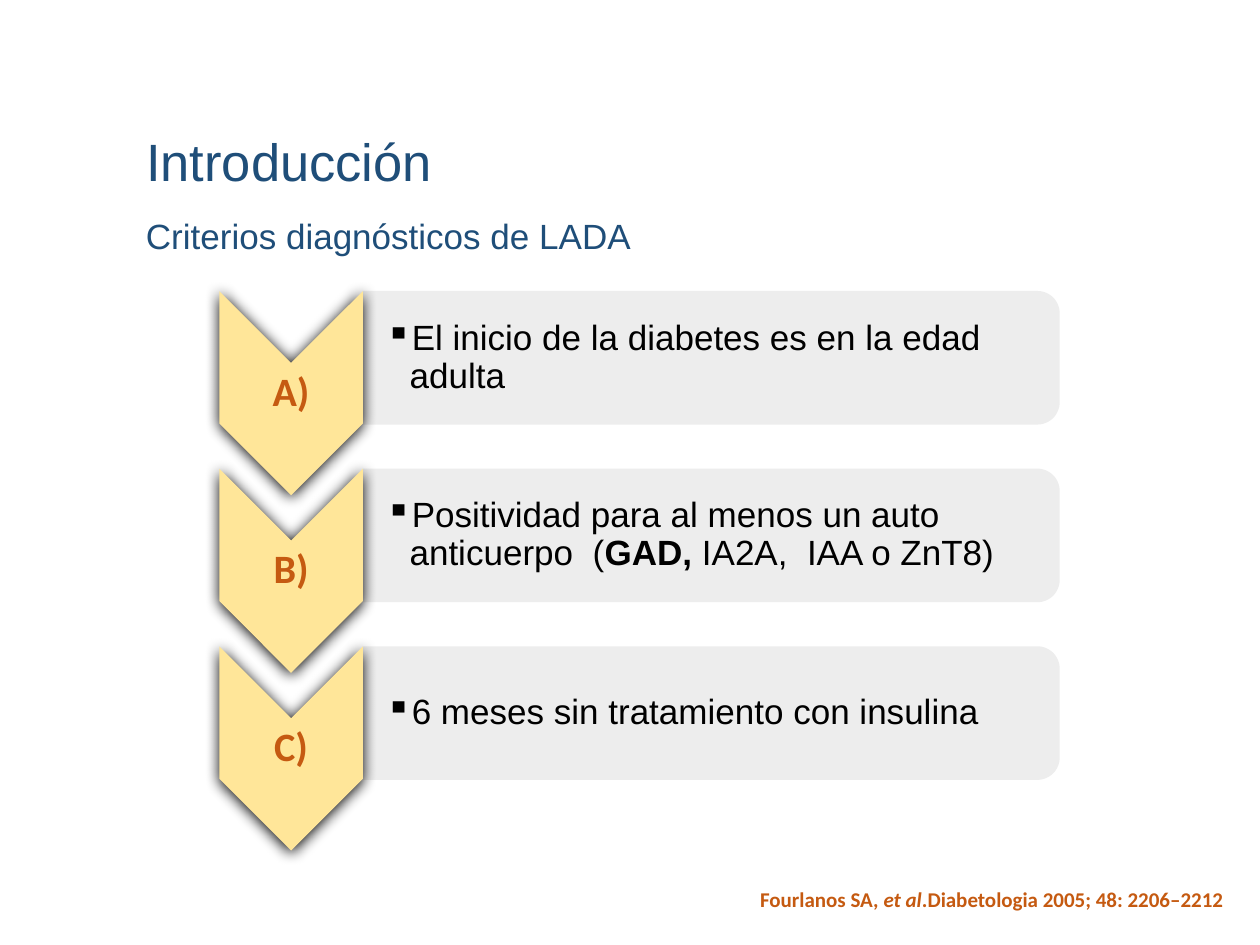
import math
from dataclasses import dataclass

from lxml import etree
from pptx import Presentation
from pptx import util as u
from pptx.dml.color import RGBColor
from pptx.enum import text
from pptx.oxml import parse_xml
from pptx.oxml.ns import qn

NS = "http://schemas.openxmlformats.org/drawingml/2006/main"


@dataclass(frozen=True)
class Theme:
    blue: str = "1F4E79"
    orange: str = "C55A11"
    yellow: str = "FFE699"
    grey: str = "EDEDED"
    black: str = "000000"
    body_font: str = "Arial"
    label_font: str = "Calibri"
    title: float = 30
    body: float = 20
    label: float = 23
    source: float = 12


@dataclass(frozen=True)
class Box:
    x: float
    y: float
    w: float
    h: float

    def emu(self):
        return [u.Inches(v) for v in (self.x, self.y, self.w, self.h)]


T = Theme()
W, H = 10, 7.5
CRITERIA = [
    ("A)", [("El inicio de la diabetes es en la edad adulta", "")]),
    ("B)", [("Positividad para al menos un auto anticuerpo  (", ""),
            ("GAD,", "b"), (" IA2A,  IAA o ZnT8)", "")]),
    ("C)", [("6 meses sin tratamiento con insulina", "")]),
]


def add_runs(p, runs, size, color, font):
    """Each run is a text and its style letters: b for bold, i for italic."""
    for words, style in runs:
        r = p.add_run()
        r.text = words
        r.font.size = u.Pt(size)
        r.font.name = font
        r.font.bold = "b" in style
        r.font.italic = "i" in style
        r.font.color.rgb = RGBColor.from_string(color)


def set_frame(tf, margins, anchor, wrap=True):
    tf.margin_left, tf.margin_top, tf.margin_right, tf.margin_bottom = map(u.Inches, margins)
    tf.vertical_anchor = anchor
    tf.word_wrap = wrap
    tf.auto_size = text.MSO_AUTO_SIZE.NONE


def add_outline(slide, points, fill):
    """Closed outline through points given in inches."""
    pts = [(u.Inches(x), u.Inches(y)) for x, y in points]
    builder = slide.shapes.build_freeform(*pts[0])
    builder.add_line_segments(pts[1:], close=True)
    sp = builder.convert_to_shape()
    sp.shadow.inherit = False
    sp.fill.solid()
    sp.fill.fore_color.rgb = RGBColor.from_string(fill)
    sp.line.fill.background()
    return sp


def add_heading(slide, box, sp, words, size):
    sp.left, sp.top, sp.width, sp.height = box.emu()
    tf = sp.text_frame
    set_frame(tf, (0.1, 0.05, 0.1, 0.05), text.MSO_ANCHOR.TOP, wrap=False)
    p = tf.paragraphs[0]
    p.alignment = text.PP_ALIGN.LEFT
    add_runs(p, [(words, "")], size, T.blue, T.body_font)


def add_bar(slide, box, runs):
    """Grey bar with its two right corners rounded."""
    radius = box.h / 6
    right, bottom = box.x + box.w, box.y + box.h

    def corner(cy, start):
        angles = [math.radians(start + 5 * i) for i in range(19)]
        return [(right - radius + radius * math.cos(a), cy + radius * math.sin(a))
                for a in angles]

    points = [(box.x, box.y), *corner(box.y + radius, -90),
              *corner(bottom - radius, 0), (box.x, bottom)]
    tf = add_outline(slide, points, T.grey).text_frame
    set_frame(tf, (0.18, 0.07, 0.07, 0.07), text.MSO_ANCHOR.MIDDLE)
    p = tf.paragraphs[0]
    p.level = 1
    p.alignment = text.PP_ALIGN.LEFT
    p.line_spacing = 0.9
    pPr = p._p.get_or_add_pPr()
    pPr.set("marL", str(u.Inches(0.19)))
    pPr.set("indent", str(-u.Inches(0.19)))
    etree.SubElement(pPr, qn("a:buChar")).set("char", "▪")
    add_runs(p, runs, T.body, T.black, T.body_font)


def add_chevron(slide, box, label):
    """Downward chevron whose point is half as deep as the box is wide."""
    x, y, right, bottom = box.x, box.y, box.x + box.w, box.y + box.h
    mid, depth = x + box.w / 2, box.w / 2
    points = [(right, y), (right, bottom - depth), (mid, bottom),
              (x, bottom - depth), (x, y), (mid, y + depth)]
    sp = add_outline(slide, points, T.yellow)
    # Soft shadow just below the chevron
    effects = sp._element.spPr.find(qn("a:effectLst"))
    effects.append(parse_xml(
        f'<a:outerShdw xmlns:a="{NS}" blurRad="{u.Pt(8.5)}" dist="{u.Pt(1)}" '
        f'dir="5400000" algn="ctr" rotWithShape="0"><a:srgbClr val="{T.black}"/>'
        '</a:outerShdw>'))
    tf = sp.text_frame
    set_frame(tf, (0.02, 0.58, 0.02, 0.58), text.MSO_ANCHOR.MIDDLE)
    p = tf.paragraphs[0]
    p.alignment = text.PP_ALIGN.CENTER
    p.line_spacing = 0.9
    add_runs(p, [(label, "b")], T.label, T.orange, T.label_font)


def add_criteria(slide, box, items):
    """Chevron column and bar column, one row for each criterion."""
    chevron_w, chevron_h, bar_h = box.w * 0.171, 1.62, 1.06
    pitch = (box.h - chevron_h) / (len(items) - 1)
    rows = [box.y + i * pitch for i in range(len(items))]
    for y, (_, runs) in zip(rows, items):
        add_bar(slide, Box(box.x + chevron_w, y, box.w - chevron_w, bar_h), runs)
    for y, (label, _) in zip(rows, items):
        add_chevron(slide, Box(box.x, y, chevron_w, chevron_h), label)


def add_source(slide, box, runs):
    tf = slide.shapes.add_textbox(*box.emu()).text_frame
    set_frame(tf, (0.1, 0.05, 0.1, 0.05), text.MSO_ANCHOR.TOP)
    p = tf.paragraphs[0]
    p.alignment = text.PP_ALIGN.RIGHT
    add_runs(p, runs, T.source, T.orange, T.label_font)


def main():
    prs = Presentation()
    prs.slide_width, prs.slide_height = u.Inches(W), u.Inches(H)
    slide = prs.slides.add_slide(prs.slide_layouts[5])

    # Title and subtitle share a left edge
    left = W * 0.106
    add_heading(slide, Box(left, H * 0.13, 2.49, 0.61), slide.shapes.title,
                "Introducción", T.title)
    subtitle = Box(left, H * 0.22, 4.08, 0.44)
    add_heading(slide, subtitle, slide.shapes.add_textbox(*subtitle.emu()),
                "Criterios diagnósticos de LADA", T.body)

    # Diagnostic criteria
    add_criteria(slide, Box(1.74, 2.31, W * 0.667, H * 0.592), CRITERIA)

    # Source
    add_source(slide, Box(5.16, 6.99, W * 0.465, H * 0.04),
               [("Fourlanos SA, ", "b"), ("et al", "bi"),
                (".Diabetologia 2005; 48: 2206–2212", "b")])
    prs.save("out.pptx")


if __name__ == "__main__":
    main()
